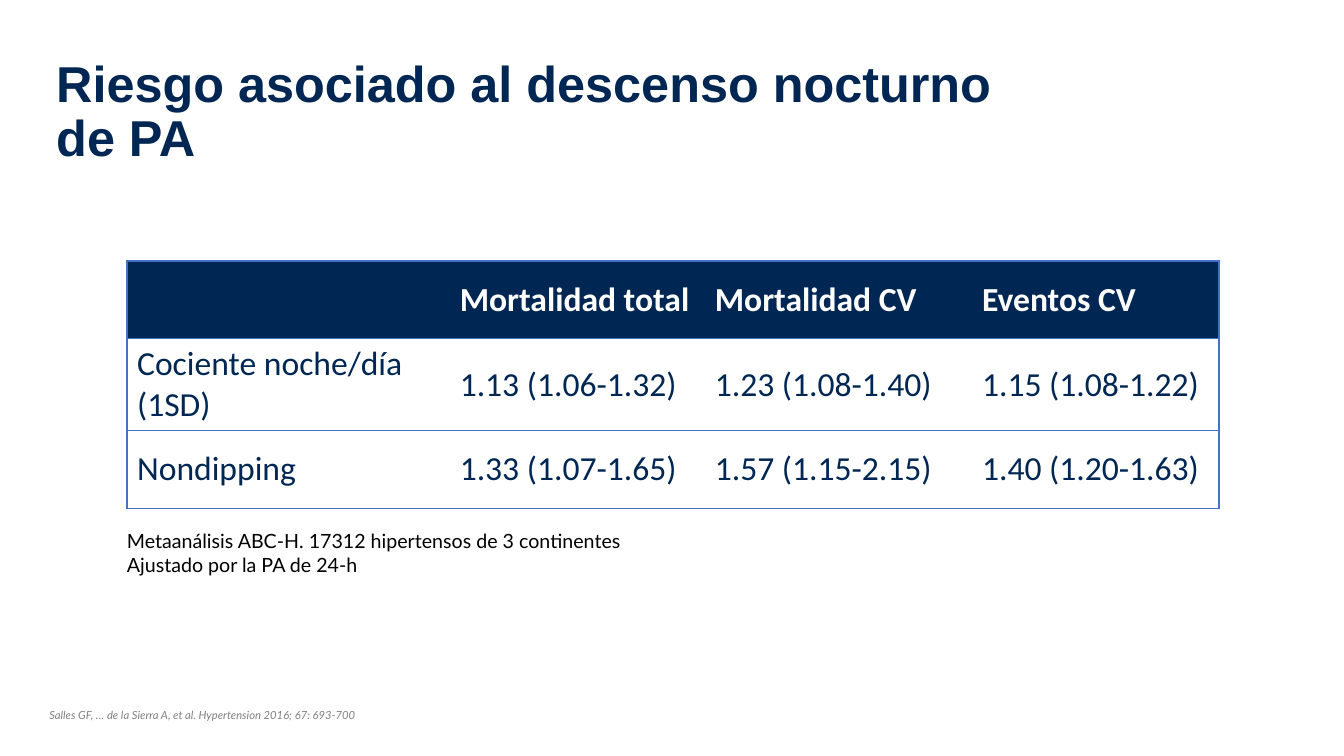
from dataclasses import dataclass

from lxml import etree
from pptx import Presentation
from pptx.dml.color import RGBColor
from pptx.enum.text import MSO_ANCHOR, MSO_AUTO_SIZE
from pptx.oxml.ns import qn
from pptx.util import Inches, Pt

MIDDLE, TOP = MSO_ANCHOR.MIDDLE, MSO_ANCHOR.TOP
NO_FIT, GROW = MSO_AUTO_SIZE.NONE, MSO_AUTO_SIZE.SHAPE_TO_FIT_TEXT


@dataclass(frozen=True)
class TextStyle:
    font: str
    size: float
    color: str
    bold: bool = False
    italic: bool = False


@dataclass(frozen=True)
class Theme:
    navy: str = "002754"
    white: str = "FFFFFF"
    border: str = "4472C4"
    border_pt: float = 1
    title: TextStyle = TextStyle("Arial", 36, "002754", bold=True)
    header: TextStyle = TextStyle("Calibri", 24, "FFFFFF", bold=True)
    body: TextStyle = TextStyle("Calibri", 24, "002754")
    note: TextStyle = TextStyle("Lato", 14, "000000")
    citation: TextStyle = TextStyle("Lato", 8, "808080", italic=True)


@dataclass(frozen=True)
class TextBlock:
    text: str
    box: tuple[float, float, float, float]
    style: TextStyle
    anchor: MSO_ANCHOR = TOP
    fit: MSO_AUTO_SIZE = GROW
    wrap: bool = True
    line_spacing: float = 1.0


THEME = Theme()

TEXT_BLOCKS = [
    TextBlock("Riesgo asociado al descenso nocturno de PA", (0.46, 0.4, 10.13, 1.45),
              THEME.title, anchor=MIDDLE, fit=NO_FIT, line_spacing=0.9),
    TextBlock("Salles GF, … de la Sierra A, et al. Hypertension 2016; 67: 693-700",
              (0.39, 6.98, 3.49, 0.24), THEME.citation, wrap=False),
    TextBlock("Metaanálisis ABC-H. 17312 hipertensos de 3 continentes\nAjustado por la PA de 24-h",
              (1.16, 5.2, 11.89, 0.57), THEME.note),
]

RISK_ROWS = [
    ("", "Mortalidad total", "Mortalidad CV", "Eventos CV"),
    ("Cociente noche/día (1SD)", "1.13 (1.06-1.32)", "1.23 (1.08-1.40)", "1.15 (1.08-1.22)"),
    ("Nondipping", "1.33 (1.07-1.65)", "1.57 (1.15-2.15)", "1.40 (1.20-1.63)"),
]
COLUMN_WIDTHS = (3.2, 2.53, 2.65, 2.45)
ROW_HEIGHT = 0.77


def style_text(frame, style: TextStyle, line_spacing: float = 1.0) -> None:
    for paragraph in frame.paragraphs:
        paragraph.line_spacing = line_spacing
        for run in paragraph.runs:
            font = run.font
            font.name, font.size = style.font, Pt(style.size)
            font.bold, font.italic = style.bold, style.italic
            font.color.rgb = RGBColor.from_string(style.color)


def add_text(slide, block: TextBlock) -> None:
    frame = slide.shapes.add_textbox(*map(Inches, block.box)).text_frame
    frame.text = block.text
    frame.word_wrap = block.wrap
    frame.auto_size = block.fit
    frame.vertical_anchor = block.anchor
    style_text(frame, block.style, block.line_spacing)


def set_borders(cell, visible: str) -> None:
    """Draw the sides named in visible (L, R, T, B) and clear the others."""
    properties = cell._tc.get_or_add_tcPr()
    for position, side in enumerate("LRTB"):
        line = etree.Element(qn(f"a:ln{side}"), w=str(Pt(THEME.border_pt)))
        if side in visible:
            fill = etree.SubElement(line, qn("a:solidFill"))
            etree.SubElement(fill, qn("a:srgbClr"), val=THEME.border)
        else:
            etree.SubElement(line, qn("a:noFill"))
        properties.insert(position, line)


def add_risk_table(slide) -> None:
    table = slide.shapes.add_table(
        len(RISK_ROWS), len(COLUMN_WIDTHS), Inches(1.26), Inches(2.59),
        Inches(sum(COLUMN_WIDTHS)), Inches(ROW_HEIGHT * len(RISK_ROWS))).table
    table.horz_banding = False
    for column, width in zip(table.columns, COLUMN_WIDTHS):
        column.width = Inches(width)
    last = len(COLUMN_WIDTHS) - 1
    for r, values in enumerate(RISK_ROWS):
        table.rows[r].height = Inches(ROW_HEIGHT)
        for c, value in enumerate(values):
            cell = table.cell(r, c)
            cell.text_frame.text = value
            cell.vertical_anchor = MIDDLE
            cell.fill.solid()
            cell.fill.fore_color.rgb = RGBColor.from_string(THEME.white if r else THEME.navy)
            style_text(cell.text_frame, THEME.body if r else THEME.header)
            # Horizontal rules everywhere, vertical ones only on the outside
            set_borders(cell, "TB" + "L" * (c == 0) + "R" * (c == last))


def main() -> None:
    deck = Presentation()
    deck.slide_width, deck.slide_height = Inches(13.33), Inches(7.5)
    slide = deck.slides.add_slide(deck.slide_layouts[6])

    # Risk table
    add_risk_table(slide)

    # Title, citation and study note
    for block in TEXT_BLOCKS:
        add_text(slide, block)

    deck.save("out.pptx")


if __name__ == "__main__":
    main()
